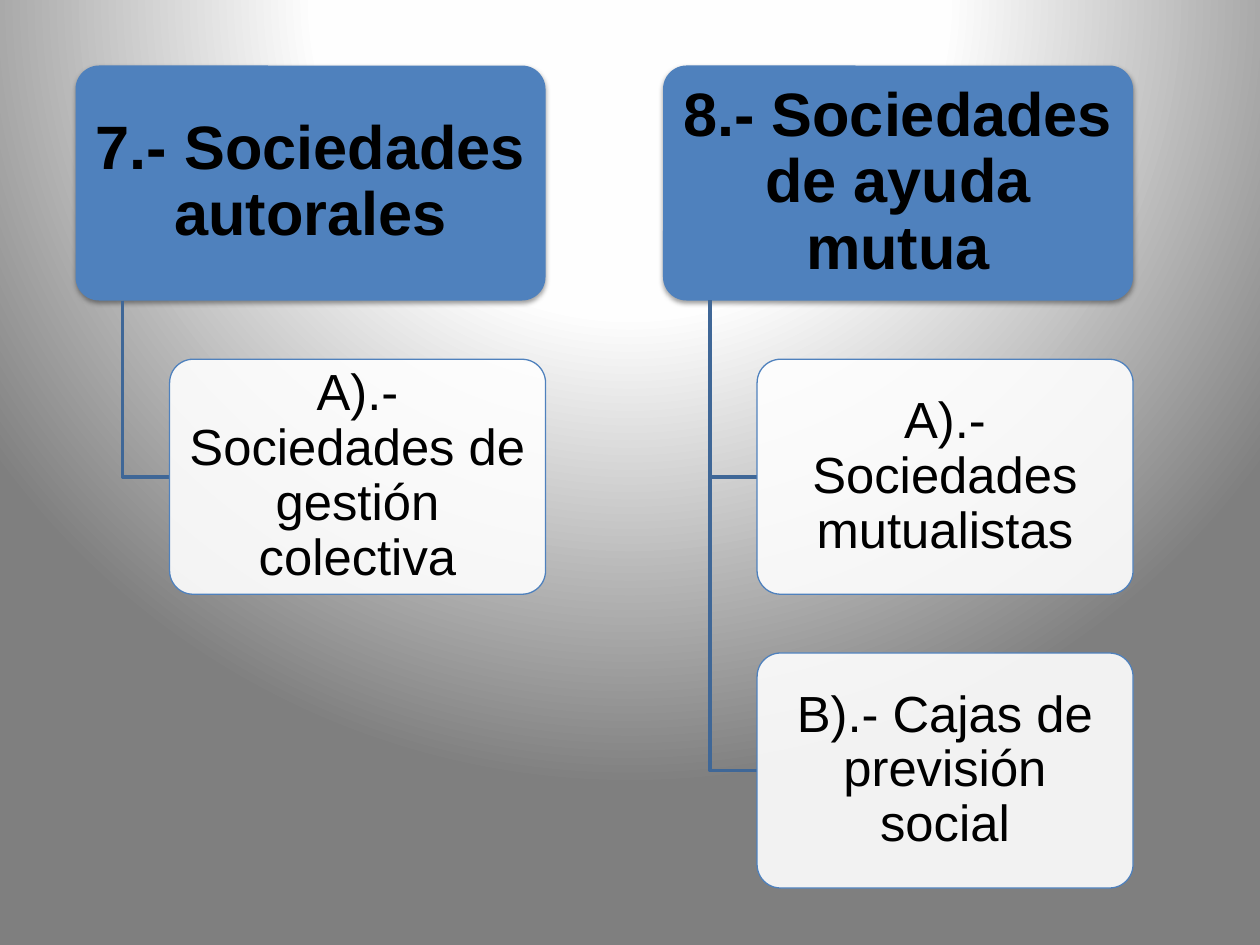
from lxml.etree import SubElement
from pptx import Presentation
from pptx.dml.color import RGBColor
from pptx.enum.shapes import MSO_SHAPE
from pptx.enum.text import MSO_ANCHOR, PP_ALIGN
from pptx.oxml.ns import qn
from pptx.util import Inches, Pt

LEFT, TOP, WIDTH = 0.6, 0.52, 3.73   # first branch; inches
HEIGHT = WIDTH / 2                   # every box is one row high
STEP = 1.25                          # pitch of columns and rows, gap included
INDENT = 0.2                         # child indent as a share of the width

HEADER = {"size": Pt(35), "bold": True, "name": "Arial"}
CHILD = {"size": Pt(29), "bold": False, "name": "Arial"}
BRANCHES = [
    ("7.- Sociedades autorales", ["A).- Sociedades de gestión colectiva"]),
    ("8.- Sociedades de ayuda mutua",
     ["A).- Sociedades mutualistas", "B).- Cajas de previsión social"]),
]


def color(value):
    return RGBColor.from_string(value)


def add_xml(parent, tag, **attributes):
    return SubElement(parent, qn(tag), {k: str(v) for k, v in attributes.items()})


def paint_background(s):
    """Radial gradient centred above the slide."""
    s.background.fill.solid()
    bg = s.element.find(".//" + qn("p:bgPr"))
    bg.remove(bg[0])
    grad = add_xml(bg, "a:gradFill", rotWithShape=1)
    bg.insert(0, grad)
    stops = add_xml(grad, "a:gsLst")
    for share, value in [(0, "FFFFFF"), (40, "FEFEFE"), (100, "7F7F7F")]:
        add_xml(add_xml(stops, "a:gs", pos=share * 1000), "a:srgbClr", val=value)
    circle = add_xml(grad, "a:path", path="circle")
    add_xml(circle, "a:fillToRect", l=50000, t=-80000, r=50000, b=180000)


def add_box(s, box, text, font, fill):
    sp = s.shapes.add_shape(MSO_SHAPE.ROUNDED_RECTANGLE, *map(Inches, box))
    sp.adjustments[0] = 0.1
    sp.shadow.inherit = False
    sp.fill.solid()
    sp.fill.fore_color.rgb = color(fill)
    tf = sp.text_frame
    tf.word_wrap = True
    tf.vertical_anchor = MSO_ANCHOR.MIDDLE
    tf.margin_left = tf.margin_right = Inches(0.07 if font["bold"] else 0.06)
    tf.margin_top = tf.margin_bottom = Inches(0.05 if font["bold"] else 0.04)
    p = tf.paragraphs[0]
    p.alignment = PP_ALIGN.CENTER
    p.line_spacing = 0.9
    r = p.add_run()
    r.text = text
    r.font.color.rgb = color("000000")
    for key, value in font.items():
        setattr(r.font, key, value)
    return sp


def add_header(s, box, text):
    sp = add_box(s, box, text, HEADER, "4F81BD")
    sp.line.fill.background()
    # Soft shadow below the header
    effects = sp.element.spPr.find(qn("a:effectLst"))
    shadow = add_xml(effects, "a:outerShdw", blurRad=Pt(3.1), dist=Pt(1.6),
                     dir=90 * 60000, rotWithShape=0)
    add_xml(add_xml(shadow, "a:srgbClr", val="000000"), "a:alpha", val=38000)


def add_child(s, box, text):
    sp = add_box(s, box, text, CHILD, "FFFFFF")
    sp.line.color.rgb = color("4F81BD")
    sp.line.width = Pt(0.75)
    # Slightly transparent fill
    fill = sp.element.spPr.find(qn("a:solidFill"))
    add_xml(fill[0], "a:alpha", val=90000)


def add_elbow(s, x, y, end_x, end_y):
    builder = s.shapes.build_freeform(Inches(x), Inches(y))
    corners = [(x, end_y), (end_x, end_y)]
    builder.add_line_segments([tuple(map(Inches, c)) for c in corners], close=False)
    sp = builder.convert_to_shape()
    sp.shadow.inherit = False
    sp.fill.background()
    sp.line.color.rgb = color("3F6797")
    sp.line.width = Pt(2)


def add_branch(s, box, title, children):
    """A header with its children hanging below, one row each."""
    x, y, w, h = box
    add_header(s, box, title)
    child_x = x + INDENT * w
    for row, text in enumerate(children, start=1):
        child_y = y + row * STEP * h
        add_elbow(s, x + INDENT * w / 2, y + h, child_x, child_y + h / 2)
        add_child(s, (child_x, child_y, w * (1 - INDENT), h), text)


def main():
    prs = Presentation()
    prs.slide_width, prs.slide_height = Inches(10), Inches(7.5)
    s = prs.slides.add_slide(prs.slide_layouts[6])
    paint_background(s)
    for column, (title, children) in enumerate(BRANCHES):
        box = (LEFT + column * STEP * WIDTH, TOP, WIDTH, HEIGHT)
        add_branch(s, box, title, children)
    prs.save("out.pptx")


if __name__ == "__main__":
    main()
